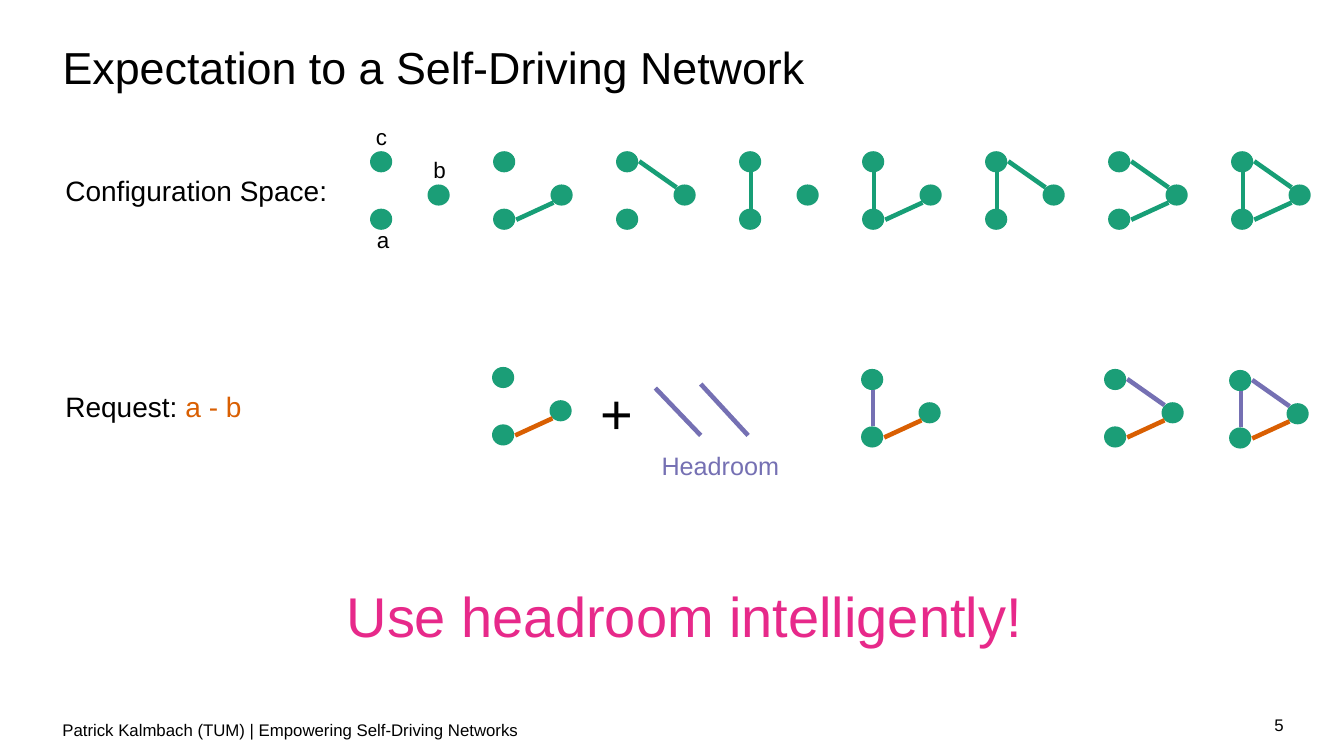
from dataclasses import dataclass

from lxml import etree
from pptx import Presentation
from pptx.dml.color import RGBColor
from pptx.enum import shapes, text
from pptx.oxml import ns
from pptx.util import Inches, Pt


@dataclass(frozen=True)
class Theme:
    """Colours, font and type sizes of the slide."""
    font: str = "Arial"
    ink: str = "000000"
    node: str = "1B9E77"
    link: str = "179E76"
    request: str = "D95F02"
    headroom: str = "7570B3"
    accent: str = "E7298A"
    small: int = 12
    letter: int = 16
    caption: int = 18
    label: int = 20
    title: int = 32
    large: int = 40
    stroke: float = 3.25


THEME = Theme()
TITLE = "Expectation to a Self-Driving Network"
LEFT, RIGHT, MIDDLE = text.PP_ALIGN.LEFT, text.PP_ALIGN.RIGHT, text.MSO_ANCHOR.MIDDLE

LABELS = [
    ((0.52, 7.04, 11.49, 0.39), "Patrick Kalmbach (TUM) | Empowering Self-Driving Networks",
     dict(size=THEME.small)),
    ((12.01, 7.04, 0.82, 0.39), "5",
     dict(size=THEME.small, align=RIGHT, anchor=text.MSO_ANCHOR.TOP)),
    ((3.34, 5.72, 7.73, 0.77), "Use headroom intelligently!",
     dict(size=THEME.large, color=THEME.accent)),
    ((0.55, 1.67, 3.36, 0.44), "Configuration Space:", dict(size=THEME.label)),
    ((3.64, 2.19, 0.24, 0.37), "a", dict(size=THEME.letter)),
    ((4.2, 1.5, 0.24, 0.37), "b", dict(size=THEME.letter)),
    ((3.63, 1.17, 0.24, 0.37), "c", dict(size=THEME.letter)),
    ((0.55, 3.81, 3.36, 0.44), [("Request: ", THEME.ink), ("a - b", THEME.request)],
     dict(size=THEME.label)),
    ((6.41, 4.42, 1.47, 0.4), "Headroom",
     dict(size=THEME.caption, color=THEME.headroom, align=text.PP_ALIGN.CENTER)),
    ((5.86, 3.7, 0.51, 0.77), "+", dict(size=THEME.large)),
]

NODE_SIZE = (0.22, 0.21)
NODES = {"c": (0, 0), "a": (0, 0.57), "b": (0.57, 0.33)}
EDGES = {
    "ac": ((0.12, 0.21), (0.12, 0.57)),
    "ab": ((0.23, 0.68), (0.6, 0.51)),
    "bc": ((0.23, 0.1), (0.6, 0.36)),
}
CONFIGURATIONS = [(), ("ab",), ("bc",), ("ac",), ("ac", "ab"), ("ac", "bc"),
                  ("ab", "bc"), ("ac", "ab", "bc")]
CONFIGURATION_LEFT, CONFIGURATION_TOP, CONFIGURATION_STEP = 3.67, 1.5, 1.22
REQUESTS = [
    (4.88, 3.64, ("ab",)),
    (8.54, 3.66, ("ac", "ab")),
    (10.95, 3.66, ("ab", "bc")),
    (12.19, 3.67, ("ac", "ab", "bc")),
]
REQUEST_COLORS = {"ab": THEME.request, "ac": THEME.headroom, "bc": THEME.headroom}
CONFIGURATION_COLORS = dict.fromkeys(EDGES, THEME.link)
HEADROOM_STROKES = [((6.5, 3.85), (6.95, 4.32)), ((6.95, 3.81), (7.42, 4.32))]


def inches(values):
    """Convert plain numbers to lengths."""
    return [Inches(value) for value in values]


def write(box, content, *, size, color=THEME.ink, align=LEFT, anchor=MIDDLE, spacing=None):
    """Fill a shape with one formatted paragraph of one or more spans."""
    frame = box.text_frame
    frame.word_wrap = True
    frame.auto_size = text.MSO_AUTO_SIZE.NONE
    frame.vertical_anchor = anchor
    para = frame.paragraphs[0]
    para.alignment = align
    if spacing:
        para.line_spacing = spacing
    spans = [(content, color)] if isinstance(content, str) else content
    for words, shade in spans:
        span = para.add_run()
        span.text = words
        span.font.name = THEME.font
        span.font.size = Pt(size)
        span.font.color.rgb = RGBColor.from_string(shade)


def draw_line(canvas, start, end, color):
    """Draw a straight stroke without shadow."""
    line = canvas.add_connector(shapes.MSO_CONNECTOR.STRAIGHT, *inches(start + end))
    line.line.color.rgb = RGBColor.from_string(color)
    line.line.width = Pt(THEME.stroke)
    etree.SubElement(line._element.spPr, ns.qn("a:effectLst"))


def draw_graph(page, left, top, edges, colors):
    """Draw the three nodes and the chosen edges as one group."""
    canvas = page.shapes.add_group_shape().shapes
    for x, y in NODES.values():
        node = canvas.add_shape(shapes.MSO_SHAPE.OVAL,
                                *inches((left + x, top + y) + NODE_SIZE))
        node.shadow.inherit = False
        node.fill.solid()
        node.fill.fore_color.rgb = RGBColor.from_string(THEME.node)
        node.line.fill.background()
    for edge in edges:
        start, end = [(left + x, top + y) for x, y in EDGES[edge]]
        draw_line(canvas, start, end, colors[edge])


def main():
    """Build and save the slide."""
    deck = Presentation()
    deck.slide_width, deck.slide_height = inches((13.33, 7.5))
    page = deck.slides.add_slide(deck.slide_layouts.get_by_name("Title Only"))
    title = page.shapes.title
    title.left, title.top, title.width, title.height = inches((0.52, 0.4, 10.45, 0.39))
    write(title, TITLE, size=THEME.title, spacing=1.25)
    for index, edges in enumerate(CONFIGURATIONS):
        left = CONFIGURATION_LEFT + index * CONFIGURATION_STEP
        draw_graph(page, left, CONFIGURATION_TOP, edges, CONFIGURATION_COLORS)
    for left, top, edges in REQUESTS:
        draw_graph(page, left, top, edges, REQUEST_COLORS)
    for start, end in HEADROOM_STROKES:
        draw_line(page.shapes, start, end, THEME.headroom)
    for place, content, style in LABELS:
        write(page.shapes.add_textbox(*inches(place)), content, **style)
    deck.save("out.pptx")


if __name__ == "__main__":
    main()
